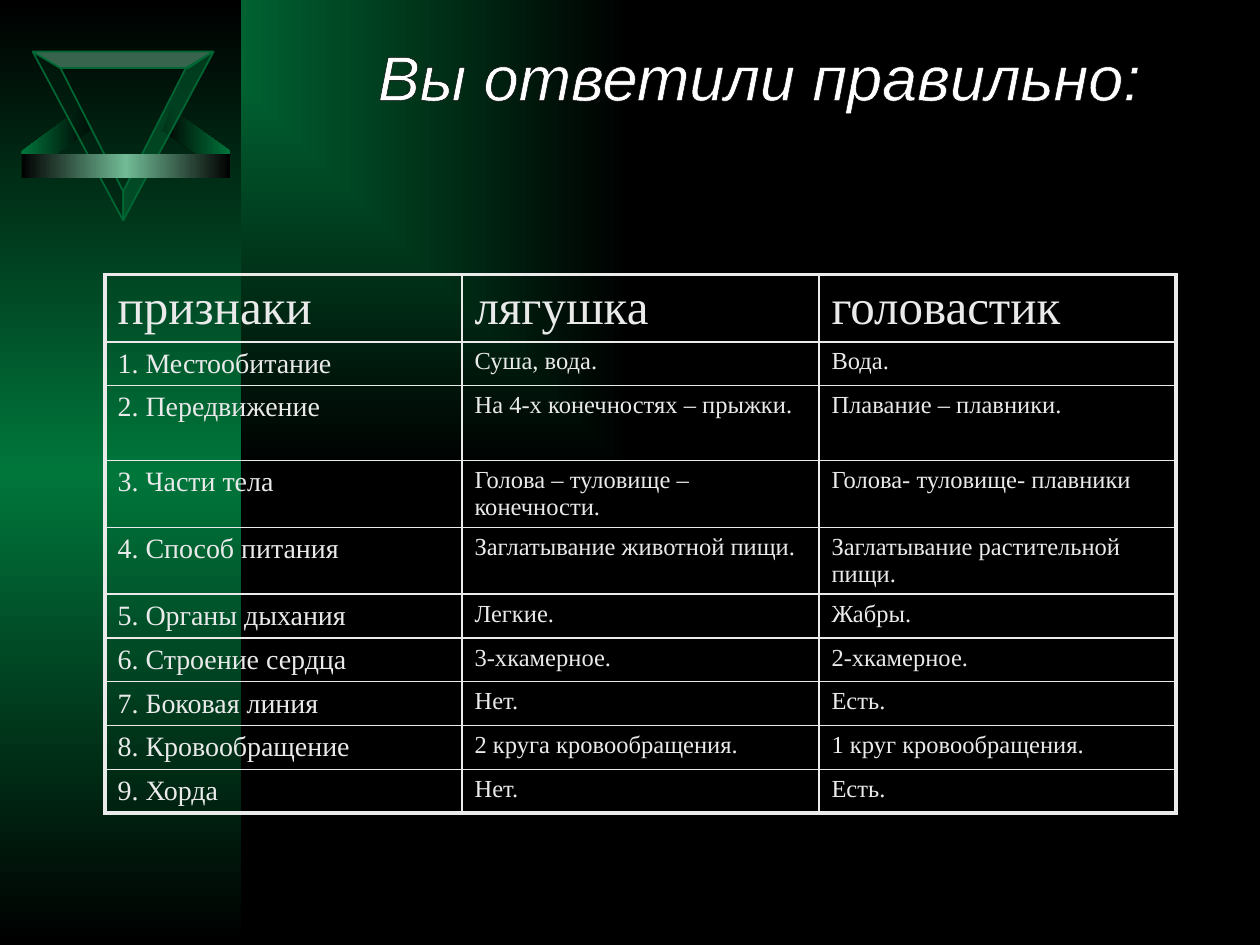
from pptx import Presentation
from pptx.dml.color import RGBColor
from pptx.enum.shapes import MSO_SHAPE
from pptx.enum.text import MSO_ANCHOR, PP_ALIGN
from pptx.oxml import parse_xml
from pptx.oxml.ns import nsdecls
from pptx.util import Pt

COLORS = {
    "black": "000000", "white": "FFFFFF", "green": "00763B", "edge": "006633",
    "dark": "002010", "mint": "71BB96", "chalk": "EAEAEA",
}
TITLE = "Вы ответили правильно:"
ROWS = [
    ("признаки", "лягушка", "головастик"),
    ("1. Местообитание", "Суша, вода.", "Вода."),
    ("2. Передвижение", "На 4-х конечностях – прыжки.", "Плавание – плавники."),
    ("3. Части тела", "Голова – туловище – конечности.", "Голова- туловище- плавники"),
    ("4. Способ питания", "Заглатывание животной пищи.", "Заглатывание растительной пищи."),
    ("5. Органы дыхания", "Легкие.", "Жабры."),
    ("6. Строение сердца", "3-хкамерное.", "2-хкамерное."),
    ("7. Боковая линия", "Нет.", "Есть."),
    ("8. Кровообращение", "2 круга кровообращения.", "1 круг кровообращения."),
    ("9. Хорда", "Нет.", "Есть."),
]
ROW_HEIGHTS = [38.3, 24.9, 42.9, 38.2, 38.2] + [24.9] * 5
COLUMN_WIDTH = 204

# Emblem outlines; the right-hand parts mirror the left-hand ones
EAR = [(12.2, 86.4), (12.2, 101.5), (51.8, 74.2), (51.8, 75.6), (46.1, 61.9)]
SIDE = [(70.4, 126), (70.4, 109.4), (34.6, 38.9), (18.7, 29.5)]
LID = [(18.7, 29.5), (34.6, 38.9), (107.6, 38.9), (121.7, 29.5)]


def rgb(name):
    return RGBColor.from_string(COLORS[name])


def solid_xml(name):
    return f'<a:solidFill><a:srgbClr val="{COLORS[name]}"/></a:solidFill>'


def gradient_xml(names, direction):
    step = 100000 // (len(names) - 1)
    stops = "".join(
        f'<a:gs pos="{i * step}"><a:srgbClr val="{COLORS[name]}"/></a:gs>'
        for i, name in enumerate(names))
    return (f'<a:gradFill {nsdecls("a")} rotWithShape="1"><a:gsLst>{stops}</a:gsLst>'
            f'{direction}</a:gradFill>')


def fill_gradient(shape, names, angle=0):
    shape.fill.background()
    properties = shape.element.spPr
    empty = properties.find("{*}noFill")
    direction = f'<a:lin ang="{angle * 60000}" scaled="1"/>'
    properties.replace(empty, parse_xml(gradient_xml(names, direction)))
    shape.line.fill.background()


def fill_glass(shape, name):
    shape.fill.solid()
    shape.fill.fore_color.rgb = rgb(name)
    color = shape.element.spPr.find("{*}solidFill")[0]
    color.append(parse_xml(f'<a:alpha {nsdecls("a")} val="50000"/>'))
    shape.line.color.rgb = rgb("edge")
    shape.line.width = Pt(1)


def mirror(points, axis):
    return [(2 * axis - x, y) for x, y in points]


def add_outline(shapes, points):
    corners = [(Pt(x), Pt(y)) for x, y in points]
    builder = shapes.build_freeform(*corners[0], scale=1.0)
    builder.add_line_segments(corners[1:], close=True)
    shape = builder.convert_to_shape()
    shape.shadow.inherit = False
    return shape


def add_band(shapes, left, top, width, height, names, angle):
    band = shapes.add_shape(MSO_SHAPE.RECTANGLE, Pt(left), Pt(top), Pt(width), Pt(height))
    band.shadow.inherit = False
    fill_gradient(band, names, angle)


def add_span(para, text, size, font, color):
    span = para.add_run()
    span.text = text
    span.font.size = Pt(size)
    span.font.name = font
    span.font.color.rgb = rgb(color)
    return span


def set_borders(cell, widths):
    properties = cell._tc.get_or_add_tcPr()
    for place, (side, width) in enumerate(widths.items()):
        properties.insert(place, parse_xml(
            f'<a:ln{side} {nsdecls("a")} w="{Pt(width)}">{solid_xml("chalk")}</a:ln{side}>'))


def add_backdrop(page):
    corner = '<a:path path="rect"><a:fillToRect r="100000" b="100000"/></a:path>'
    page.element.cSld.insert(0, parse_xml(
        f'<p:bg {nsdecls("p", "a")}><p:bgPr>{gradient_xml(["green", "black"], corner)}'
        '<a:effectLst/></p:bgPr></p:bg>'))
    add_band(page.shapes, 0, 0, 138, 540, ["black", "green", "black"], 90)


def add_emblem(page):
    parts = page.shapes.add_group_shape().shapes
    fill_gradient(add_outline(parts, mirror(EAR, 72)), ["black", "green"])
    fill_gradient(add_outline(parts, EAR), ["green", "black"])
    for points, color in ((SIDE, "dark"), (LID, "mint"), (mirror(SIDE, 70.4), "edge")):
        fill_glass(add_outline(parts, points), color)
    add_band(parts, 12.2, 87.8, 119.5, 13.7, ["black", "mint", "black"], 0)


def add_features(page):
    last_row, last_column = len(ROWS) - 1, len(ROWS[0]) - 1
    frame = page.shapes.add_table(
        len(ROWS), len(ROWS[0]), Pt(60), Pt(157),
        Pt(COLUMN_WIDTH * len(ROWS[0])), Pt(sum(ROW_HEIGHTS)))
    table = frame.table
    table.first_row = table.horz_banding = False
    for column in table.columns:
        column.width = Pt(COLUMN_WIDTH)
    for r, (texts, height) in enumerate(zip(ROWS, ROW_HEIGHTS)):
        table.rows[r].height = Pt(height)
        for c, text in enumerate(texts):
            cell = table.cell(r, c)
            cell.fill.background()
            outer = {"L": c == 0, "R": c == last_column, "T": r == 0, "B": r == last_row}
            set_borders(cell, {side: 2.25 if edge else 1 for side, edge in outer.items()})
            size = 28 if r == 0 else 16 if c == 0 else 14
            add_span(cell.text_frame.paragraphs[0], text, size, "Times New Roman", "chalk")


def add_title(page):
    box = page.shapes.add_textbox(Pt(155), Pt(18), Pt(558), Pt(114))
    box.text_frame.word_wrap = False
    box.text_frame.vertical_anchor = MSO_ANCHOR.TOP
    para = box.text_frame.paragraphs[0]
    para.alignment = PP_ALIGN.CENTER
    span = add_span(para, TITLE, 36, "Arial", "white")
    span.font.italic = True
    span.font._element.insert(0, parse_xml(
        f'<a:ln {nsdecls("a")} w="{Pt(0.75)}">{solid_xml("black")}</a:ln>'))


def main():
    deck = Presentation()
    deck.slide_width, deck.slide_height = Pt(720), Pt(540)
    page = deck.slides.add_slide(deck.slide_layouts[6])
    add_backdrop(page)
    add_emblem(page)
    add_features(page)
    add_title(page)
    deck.save("out.pptx")


if __name__ == "__main__":
    main()
